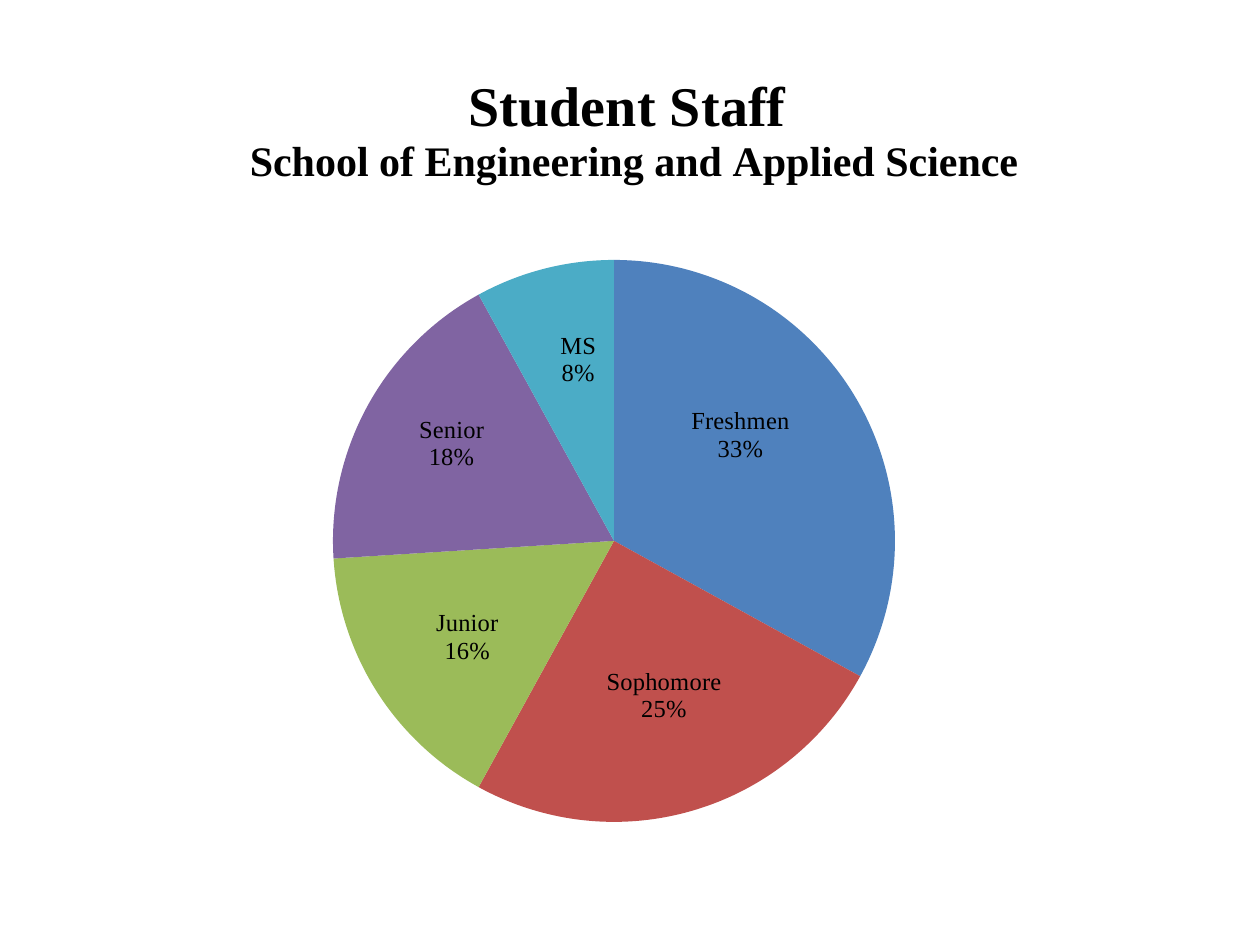
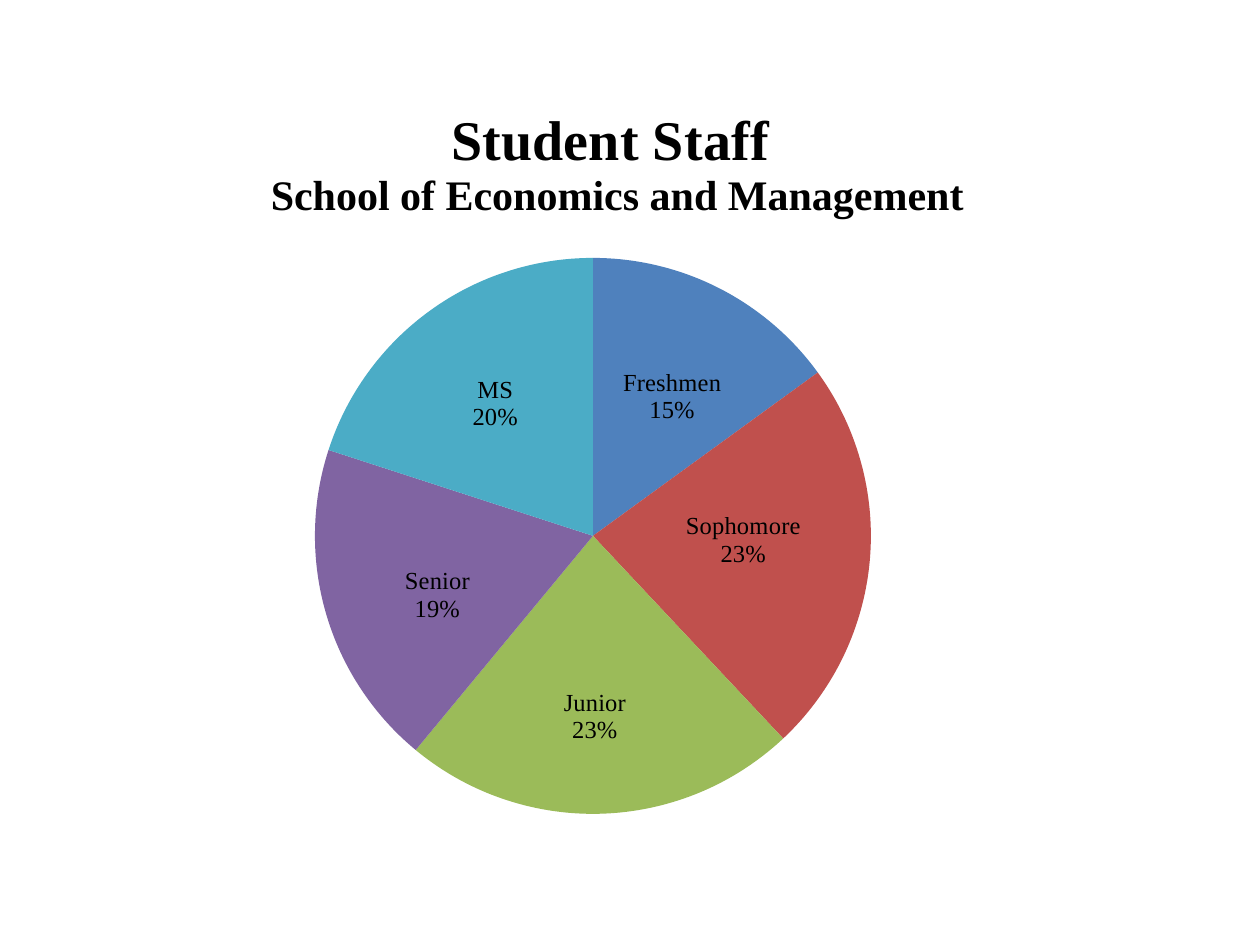
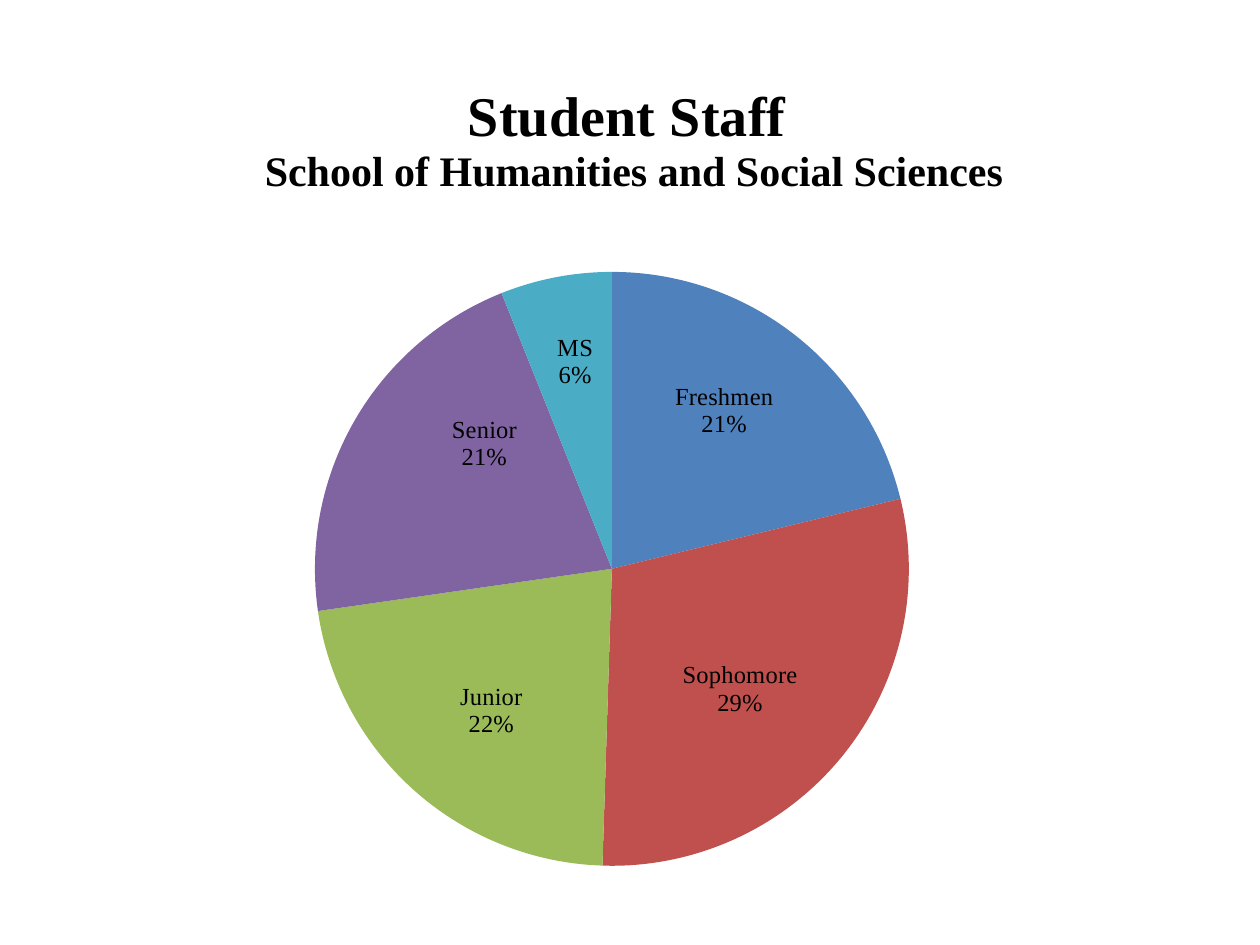
from math import sin, cos, radians, tau
from lxml.etree import SubElement
from pptx import Presentation
from pptx.chart.data import CategoryChartData
from pptx.dml.color import RGBColor
from pptx.enum.chart import XL_CHART_TYPE as ChartType, XL_LABEL_POSITION as LabelPos
from pptx.oxml.ns import qn
from pptx.util import Emu, Pt

PX = 914400 / 126
SERIF, SANS = "Times New Roman", "Calibri"
BLACK = "000000"
YEARS = ["Freshmen", "Sophomore", "Junior", "Senior", "MS"]
YEAR_COLORS = ["4F81BD", "C0504D", "9BBB59", "8064A2", "4BACC6"]
LABEL_WIDTHS = [98, 115, 62, 65, 45]
LABEL_HEIGHT, LABEL_GAP = 55, 7

# Places in px: frame is left, top, width, height; pie is centre and radius;
# labels are the centres of the slice labels.
SCHOOLS = [
    dict(name="School of Engineering and Applied Science",
         shares=[33, 25, 16, 18, 8],
         frame=(63, 39, 1134, 857), title_at=(246, 70), pie=(614, 541, 281),
         labels=[(740, 435), (664, 695), (468, 637), (452, 444), (574, 360)]),
    dict(name="School of Economics and Management",
         shares=[15, 23, 23, 19, 20],
         frame=(39, 49, 1163, 844), title_at=(267, 104), pie=(593, 536, 278),
         labels=[(672, 397), (743, 540), (595, 716), (438, 595), (496, 404)]),
    dict(name="School of Humanities and Social Sciences",
         shares=[21, 29, 22, 21, 6],
         frame=(63, 49, 1134, 857), title_at=(261, 80), pie=(612, 569, 297),
         labels=[(724, 411), (740, 689), (492, 710), (485, 444), (571, 362)]),
]


def px(n):
    return Emu(round(n * PX))


def rgb(color):
    return RGBColor.from_string(color)


def style_font(font, name, size, bold=False):
    font.name, font.size, font.bold = name, Pt(size), bold
    font.color.rgb = rgb(BLACK)


def set_layout(parent, index, settings):
    """Give a chart part a manual layout, as its child at index."""
    for old in parent.findall(qn("c:layout")):
        parent.remove(old)
    layout = SubElement(parent, qn("c:layout"))
    parent.insert(index, layout)
    manual = SubElement(layout, qn("c:manualLayout"))
    for tag, val in settings.items():
        SubElement(manual, qn("c:" + tag)).set("val", str(val))


def add_title(chart, school):
    tf = chart.chart_title.text_frame
    p = tf.paragraphs[0]
    for text, size in (("Student Staff ", 32), (school["name"], 24)):
        if p.runs:
            p = tf.add_paragraph()
        r = p.add_run()
        r.text = text
        style_font(r.font, SERIF, size, True)
    left, top, width, height = school["frame"]
    x, y = school["title_at"]
    set_layout(chart.chart_title.element, 1, dict(
        xMode="edge", yMode="edge",
        x=round((x - left) / width, 4), y=round((y - top) / height, 4)))


def place_pie(chart, school):
    left, top, width, height = school["frame"]
    cx, cy, radius = school["pie"]
    set_layout(chart.element.xpath("c:chart/c:plotArea")[0], 0, dict(
        layoutTarget="inner", xMode="edge", yMode="edge",
        x=round((cx - radius - left) / width, 4),
        y=round((cy - radius - top) / height, 4),
        w=round(2 * radius / width, 4), h=round(2 * radius / height, 4)))


def side(component):
    """Which way a label leans off the rim: -1, 0 or 1."""
    if abs(component) < sin(radians(5)):
        return 0
    return 1 if component > 0 else -1


def outside_centres(school):
    """Centres of labels resting just outside their slices."""
    cx, cy, radius = school["pie"]
    shares = school["shares"]
    reach = radius + LABEL_GAP
    for i, (share, label_width) in enumerate(zip(shares, LABEL_WIDTHS)):
        angle = tau * (sum(shares[:i]) + share / 2) / sum(shares)
        dx, dy = sin(angle), -cos(angle)
        yield (cx + reach * dx + side(dx) * label_width / 2,
               cy + reach * dy + side(dy) * LABEL_HEIGHT / 2)


def add_slices(chart, school):
    points = chart.plots[0].series[0].points
    for i, color in enumerate(YEAR_COLORS):
        point = points[i]
        point.format.fill.solid()
        point.format.fill.fore_color.rgb = rgb(color)
        style_font(point.data_label.font, SERIF, 14)
        point.data_label.position = LabelPos.BEST_FIT

    # Slice labels show year and percent, each moved to its own place
    shown = dict(showVal=0, showCatName=1, showPercent=1, showLeaderLines=0)
    for tag, val in shown.items():
        for flag in chart.element.xpath(".//c:" + tag):
            flag.set("val", str(val))
    width, height = school["frame"][2:]
    labels = chart.element.xpath(".//c:dLbl")
    for label, (x, y), (x0, y0) in zip(labels, school["labels"], outside_centres(school)):
        set_layout(label, 1, dict(x=round((x - x0) / width, 4),
                                  y=round((y - y0) / height, 4)))
        SubElement(label, qn("c:separator")).text = "\n"


def add_staff_slide(prs, school):
    s = prs.slides.add_slide(prs.slide_layouts[6])
    data = CategoryChartData()
    data.categories = YEARS
    data.add_series("Series 1", school["shares"])
    frame = [px(n) for n in school["frame"]]
    chart = s.shapes.add_chart(ChartType.PIE, *frame, data).chart
    style_font(chart.font, SANS, 10)
    chart.has_legend = False
    chart.has_title = True
    chart.plots[0].vary_by_categories = True
    add_title(chart, school)
    place_pie(chart, school)
    add_slices(chart, school)


def main():
    prs = Presentation()
    prs.slide_width, prs.slide_height = px(1260), px(945)
    for school in SCHOOLS:
        add_staff_slide(prs, school)
    prs.save("out.pptx")


if __name__ == "__main__":
    main()
